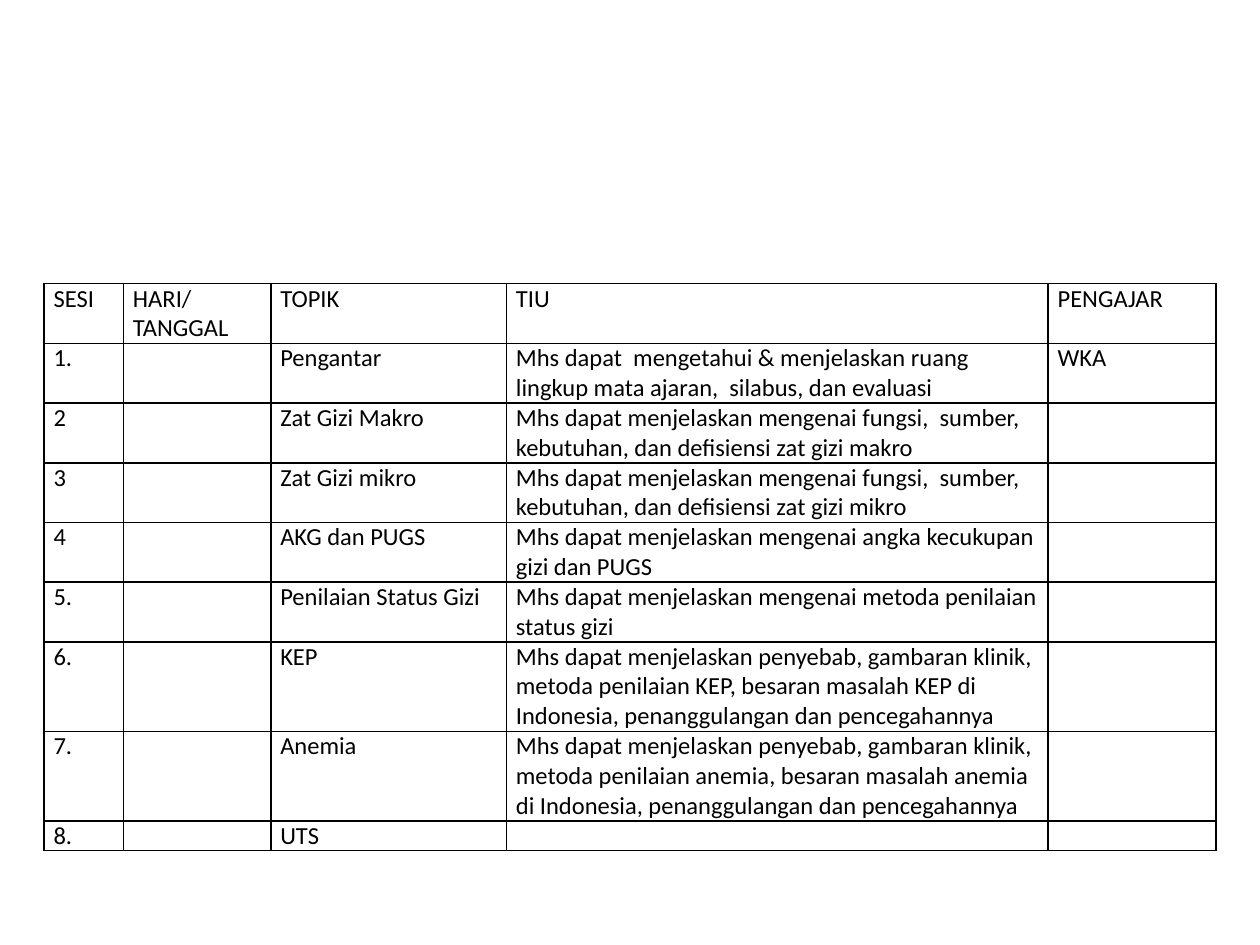
from lxml import etree
from pptx import Presentation
from pptx.dml.color import RGBColor
from pptx.oxml.ns import qn
from pptx.util import Cm, Pt

BLANK_LAYOUT = 6
FONT, SIZE = "Calibri", 14
BLACK, WHITE = "000000", "FFFFFF"
LEFT, TOP, LINE_HEIGHT = 0.89, 5.72, 0.6
SIDE_MARGIN = 0.19

# heading, width in cm
COLUMNS = [
    ("SESI", 1.6),
    ("HARI/\nTANGGAL", 2.97),
    ("TOPIK", 4.75),
    ("TIU", 10.92),
    ("PENGAJAR", 3.38),
]

# session, topic, objective, lecturer, lines of text
SESSIONS = [
    ("1.", "Pengantar", "Mhs dapat  mengetahui & menjelaskan ruang lingkup mata ajaran,  "
     "silabus, dan evaluasi", "WKA", 2),
    ("2", "Zat Gizi Makro", "Mhs dapat menjelaskan mengenai fungsi,  sumber, kebutuhan, "
     "dan defisiensi zat gizi makro", "", 2),
    ("3", "Zat Gizi mikro", "Mhs dapat menjelaskan mengenai fungsi,  sumber, kebutuhan, "
     "dan defisiensi zat gizi mikro", "", 2),
    ("4", "AKG dan PUGS", "Mhs dapat menjelaskan mengenai angka kecukupan gizi dan PUGS", "", 2),
    ("5.", "Penilaian Status Gizi", "Mhs dapat menjelaskan mengenai metoda penilaian "
     "status gizi", "", 2),
    ("6.", "KEP", "Mhs dapat menjelaskan penyebab, gambaran klinik, metoda penilaian KEP, "
     "besaran masalah KEP di Indonesia, penanggulangan dan pencegahannya", "", 3),
    ("7.", "Anemia", "Mhs dapat menjelaskan penyebab, gambaran klinik, metoda penilaian "
     "anemia, besaran masalah anemia di Indonesia, penanggulangan dan pencegahannya", "", 3),
    ("8.", "UTS", "", "", 1),
]


def color(hex_value):
    return RGBColor.from_string(hex_value)


def write(frame, text, font=FONT, size=SIZE, ink=BLACK):
    frame.text = text
    for paragraph in frame.paragraphs:
        for run in paragraph.runs:
            run.font.name = font
            run.font.size = Pt(size)
            run.font.color.rgb = color(ink)
        if not paragraph.runs:
            # Keeps an empty cell from growing to the default text size
            paragraph._p.get_or_add_endParaRPr().set("sz", str(size * 100))


def add_borders(cell, ink=BLACK, width=1):
    properties = cell._tc.get_or_add_tcPr()
    for side in ("a:lnL", "a:lnR", "a:lnT", "a:lnB"):
        line = etree.SubElement(properties, qn(side), w=str(Pt(width)))
        fill = etree.SubElement(line, qn("a:solidFill"))
        etree.SubElement(fill, qn("a:srgbClr"), val=ink)


def format_cell(cell, text):
    cell.margin_left = cell.margin_right = Cm(SIDE_MARGIN)
    cell.margin_top = cell.margin_bottom = 0
    add_borders(cell)
    cell.fill.solid()
    cell.fill.fore_color.rgb = color(WHITE)
    write(cell.text_frame, text)


def add_schedule(slide):
    headings, widths = zip(*COLUMNS)
    rows = [(headings, 2)]
    for session, topic, objective, lecturer, lines in SESSIONS:
        rows.append(((session, "", topic, objective, lecturer), lines))
    height = LINE_HEIGHT * sum(lines for _, lines in rows)
    schedule = slide.shapes.add_table(
        len(rows), len(COLUMNS), Cm(LEFT), Cm(TOP), Cm(sum(widths)), Cm(height)
    ).table
    schedule.first_row = schedule.horz_banding = False
    for column, width in zip(schedule.columns, widths):
        column.width = Cm(width)
    for row, (texts, lines) in zip(schedule.rows, rows):
        row.height = Cm(LINE_HEIGHT * lines)
        for cell, text in zip(row.cells, texts):
            format_cell(cell, text)


def main():
    deck = Presentation()
    deck.slide_width, deck.slide_height = Cm(25.4), Cm(19.05)
    add_schedule(deck.slides.add_slide(deck.slide_layouts[BLANK_LAYOUT]))
    deck.save("out.pptx")


if __name__ == "__main__":
    main()
